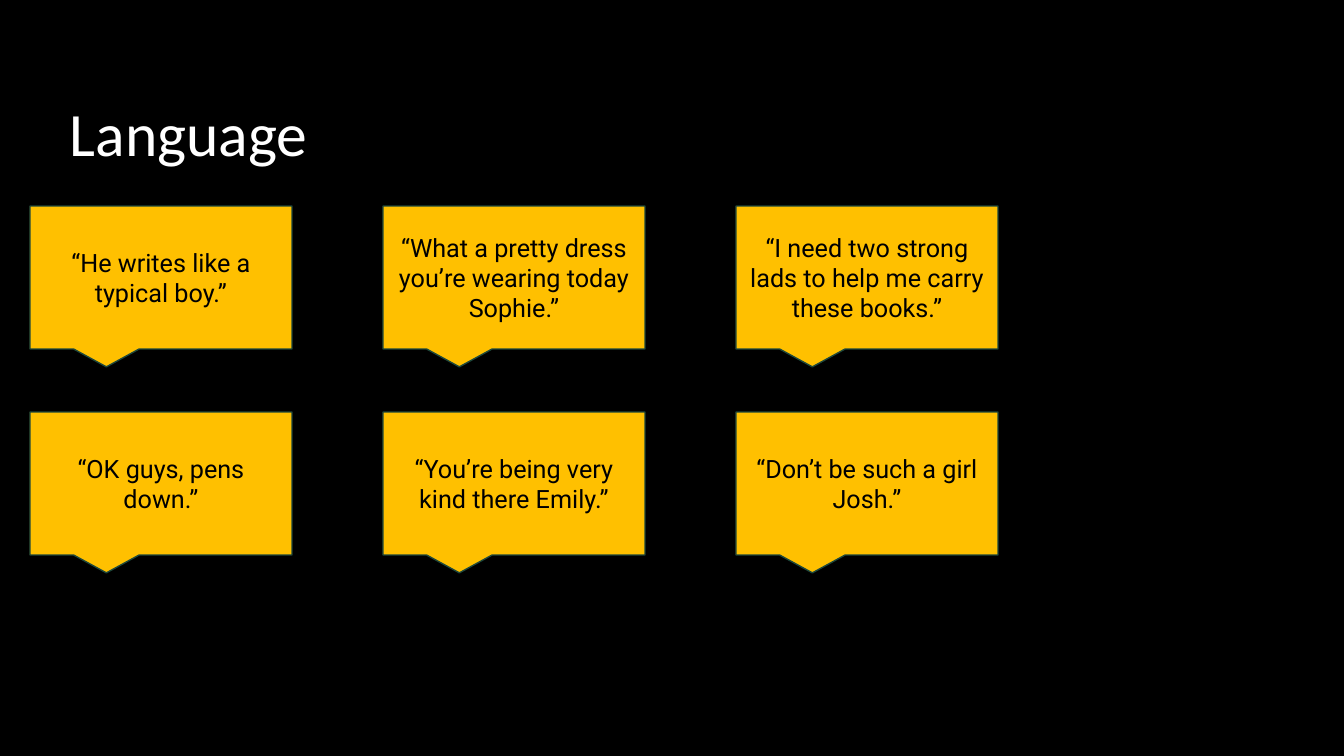
"""Build the Language slide: a title above a grid of quoted remarks."""
from pptx import Presentation
from pptx.dml.color import RGBColor
from pptx.enum.shapes import MSO_SHAPE as Shape
from pptx.enum.text import MSO_ANCHOR as Anchor, PP_ALIGN as Align
from pptx.util import Pt

SCALE = 12192000 / 1344
COLUMNS = 3
QUOTES = [
    "“He writes like a typical boy.”",
    "“What a pretty dress you’re wearing today Sophie.”",
    "“I need two strong lads to help me carry these books.”",
    "“OK guys, pens down.”",
    "“You’re being very kind there Emily.”",
    "“Don’t be such a girl Josh.”",
]


def px(*lengths):
    return [round(length * SCALE) for length in lengths]


def color(value):
    return RGBColor.from_string(value)


def write_text(shape, text, font="Roboto", size=18, fill="000000",
               align=Align.CENTER, spacing=1.0):
    frame = shape.text_frame
    frame.word_wrap = True
    frame.vertical_anchor = Anchor.MIDDLE
    paragraph = frame.paragraphs[0]
    paragraph.alignment = align
    paragraph.line_spacing = spacing
    run = paragraph.add_run()
    run.text = text
    run.font.name = font
    run.font.size = Pt(size)
    run.font.color.rgb = color(fill)


def add_title(slide, text):
    box = slide.shapes.add_textbox(*px(60, 40, 952, 146))
    write_text(box, text, font="Calibri", size=44, fill="FFFFFF",
               align=Align.LEFT, spacing=1.5)


def add_quote(slide, left, top, text):
    callout = slide.shapes.add_shape(
        Shape.RECTANGULAR_CALLOUT, *px(left, top, 262, 143))
    callout.shadow.inherit = False
    callout.fill.solid()
    callout.fill.fore_color.rgb = color("FFC000")
    callout.line.color.rgb = color("1E483B")
    callout.line.width = Pt(1)
    write_text(callout, text)


def main():
    presentation = Presentation()
    presentation.slide_width, presentation.slide_height = px(1344, 756)
    slide = presentation.slides.add_slide(presentation.slide_layouts[6])
    slide.background.fill.solid()
    slide.background.fill.fore_color.rgb = color("000000")
    add_title(slide, "Language")
    for index, quote in enumerate(QUOTES):
        row, column = divmod(index, COLUMNS)
        add_quote(slide, 30 + 353 * column, 206 + 206 * row, quote)
    presentation.save("out.pptx")


if __name__ == "__main__":
    main()
